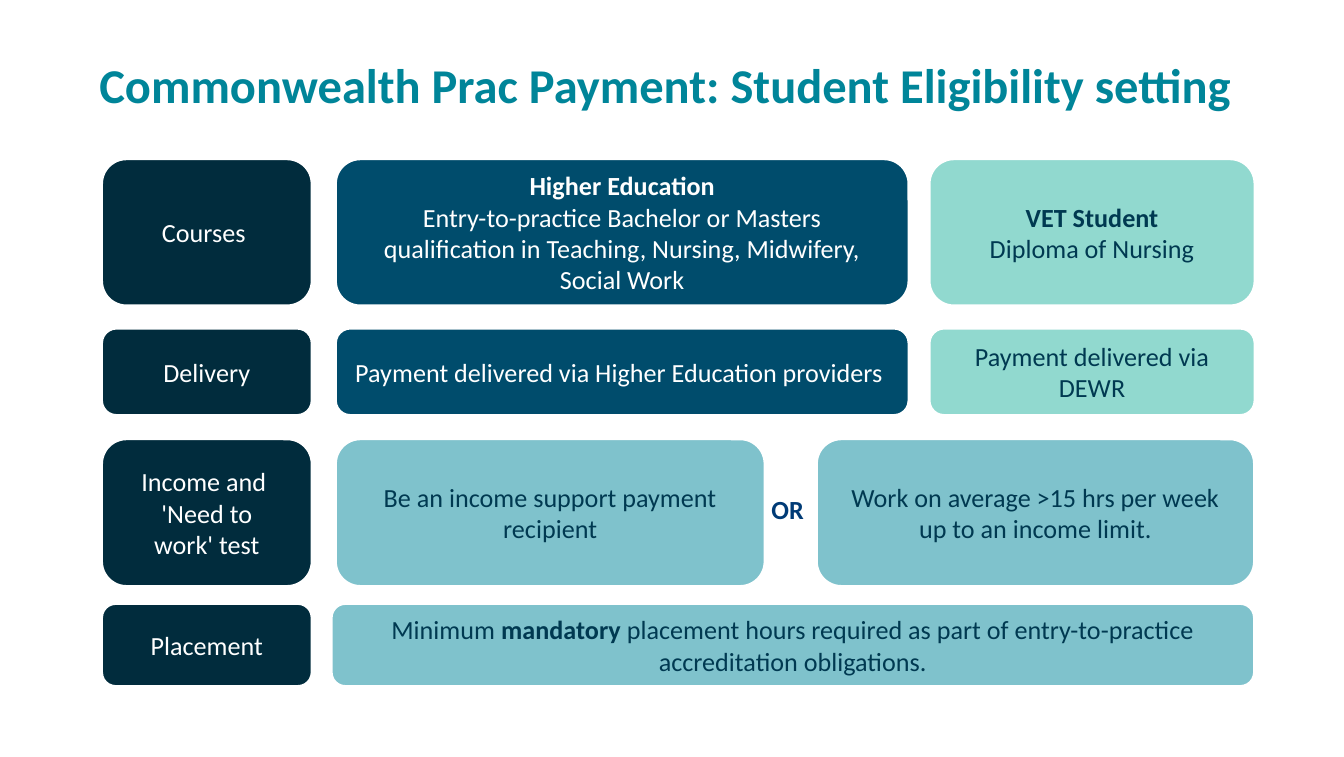
from pptx import Presentation
from pptx.dml.color import RGBColor
from pptx.enum.shapes import MSO_SHAPE
from pptx.enum.text import MSO_ANCHOR, PP_ALIGN
from pptx.util import Cm, Pt

ROUNDED = MSO_SHAPE.ROUNDED_RECTANGLE
RECTANGLE = MSO_SHAPE.RECTANGLE
CENTER, LEFT = PP_ALIGN.CENTER, PP_ALIGN.LEFT
MIDDLE, TOP = MSO_ANCHOR.MIDDLE, MSO_ANCHOR.TOP

WHITE = RGBColor(0xFF, 0xFF, 0xFF)
TEAL = RGBColor(0x00, 0x85, 0x99)
NIGHT = RGBColor(0x01, 0x2C, 0x3D)
BLUE = RGBColor(0x00, 0x4C, 0x6C)
MINT = RGBColor(0x91, 0xD9, 0xCF)
SKY = RGBColor(0x7F, 0xC2, 0xCC)
INK = RGBColor(0x00, 0x39, 0x51)
NAVY = RGBColor(0x00, 0x3B, 0x76)

TITLE = [[("Commonwealth Prac Payment: Student Eligibility setting ", True)]]

STYLES = {
    "label": {"fill": NIGHT, "color": WHITE, "margin": 0.45},
    "higher": {"fill": BLUE, "color": WHITE},
    "vet": {"fill": MINT, "color": INK},
    "rule": {"fill": SKY, "color": INK},
    "or": {"fill": WHITE, "color": NAVY, "preset": RECTANGLE,
           "align": LEFT, "anchor": TOP, "line": 0.75},
}

COLUMNS = {
    "label": (1.93, 3.96),
    "higher": (6.35, 10.82),
    "vet": (17.57, 6.14),
    "support": (6.35, 8.1),
    "or": (14.33, 1.22),
    "work": (15.44, 8.26),
    "all": (6.27, 17.43),
}

ROWS = [
    (3.01, 2.76, [
        ("label", "label", [[("Courses ", False)]]),
        ("higher", "higher", [
            [("Higher Education", True)],
            [("Entry-to-practice Bachelor or Masters qualification in "
              "Teaching, Nursing, Midwifery, Social Work", False)],
        ]),
        ("vet", "vet", [[("VET Student", True)],
                        [("Diploma of Nursing", False)]]),
    ]),
    (6.21, 1.63, [
        ("label", "label", [[("Delivery", False)]]),
        ("higher", "higher",
         [[("Payment delivered via Higher Education providers ", False)]]),
        ("vet", "vet", [[("Payment delivered via DEWR", False)]]),
    ]),
    (8.3, 2.77, [
        ("label", "label", [[("Income and ", False)],
                            [("'Need to work' test", False)]]),
        ("or", "or", [[("OR", True)]]),
        ("work", "rule",
         [[("Work on average >15 hrs per week up to an income limit.", False)]]),
        ("support", "rule",
         [[("Be an income support payment recipient", False)]]),
    ]),
    (11.41, 1.55, [
        ("label", "label", [[("Placement", False)]]),
        ("all", "rule", [[
            ("Minimum ", False), ("mandatory", True),
            (" placement hours required as part of entry-to-practice "
             "accreditation obligations.", False),
        ]]),
    ]),
]
OR_TOP, OR_HEIGHT = 9.2, 0.86


def write(shape, paragraphs, color, size, align):
    frame = shape.text_frame
    frame.word_wrap = True
    for index, runs in enumerate(paragraphs):
        paragraph = frame.add_paragraph() if index else frame.paragraphs[0]
        paragraph.alignment = align
        for text, bold in runs:
            run = paragraph.add_run()
            run.text = text
            run.font.color.rgb = color
            formats = {"name": "Calibri", "size": Pt(size), "bold": bold}
            for name, value in formats.items():
                setattr(run.font, name, value)


def add_card(slide, left, top, width, height, style, paragraphs):
    shape = slide.shapes.add_shape(
        style.get("preset", ROUNDED), Cm(left), Cm(top), Cm(width), Cm(height))
    shape.shadow.inherit = False
    shape.fill.solid()
    shape.fill.fore_color.rgb = style["fill"]
    shape.line.color.rgb = WHITE
    shape.line.width = Pt(style.get("line", 1))
    margin = Cm(style.get("margin", 0.25))
    formats = {"vertical_anchor": style.get("anchor", MIDDLE),
               "margin_left": margin, "margin_right": margin}
    for name, value in formats.items():
        setattr(shape.text_frame, name, value)
    write(shape, paragraphs, style["color"], 14, style.get("align", CENTER))


def main():
    presentation = Presentation()
    presentation.slide_width = Cm(25.4)
    presentation.slide_height = Cm(14.3)
    slide = presentation.slides.add_slide(presentation.slide_layouts[6])

    for row_top, row_height, cards in ROWS:
        for column, style, paragraphs in cards:
            left, width = COLUMNS[column]
            top, height = row_top, row_height
            if column == "or":
                top, height = OR_TOP, OR_HEIGHT
            add_card(slide, left, top, width, height, STYLES[style], paragraphs)

    title = slide.shapes.add_textbox(Cm(1.19), Cm(0.92), Cm(23.01), Cm(1.37))
    write(title, TITLE, TEAL, 26, CENTER)
    presentation.save("out.pptx")


if __name__ == "__main__":
    main()
